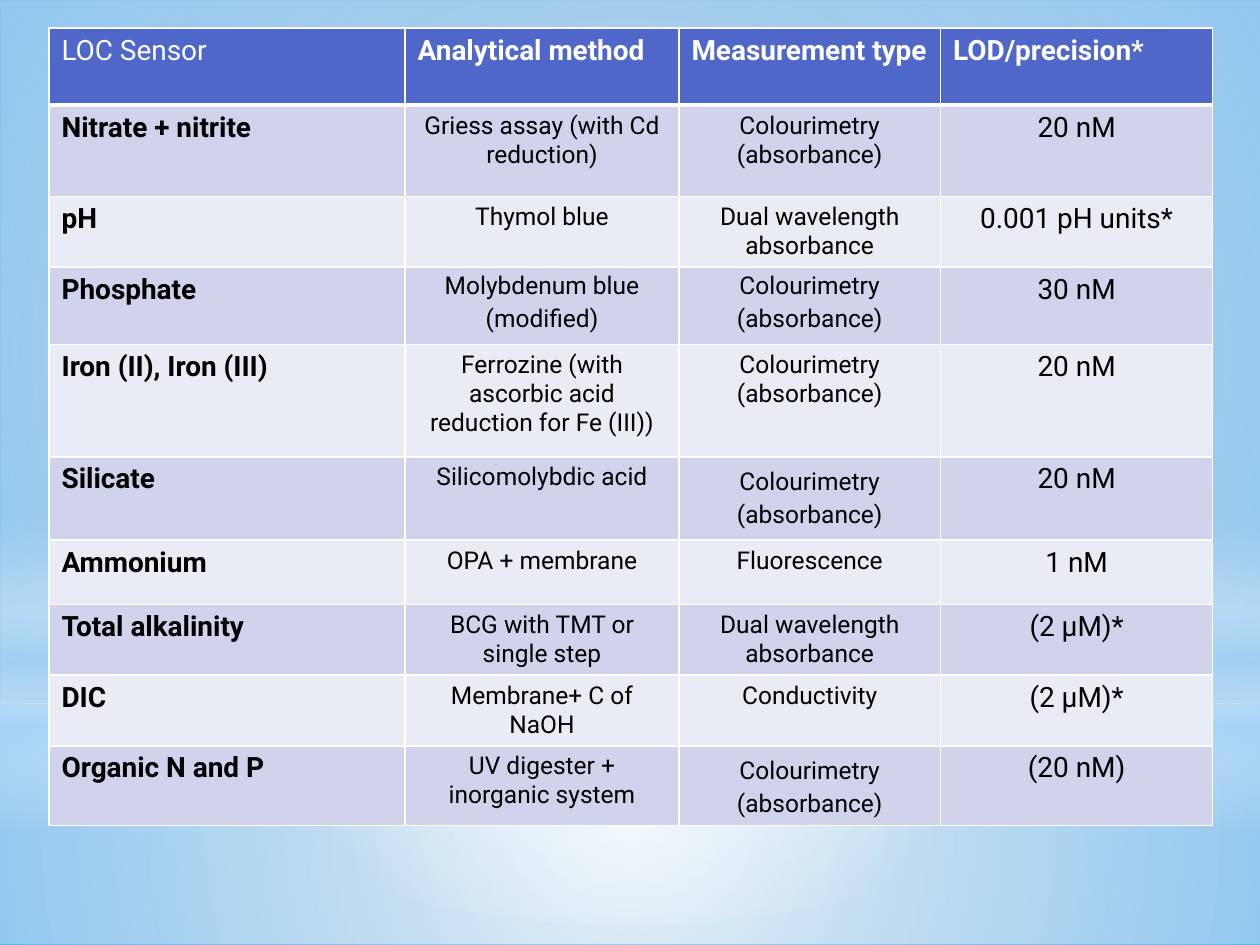
from dataclasses import dataclass

from lxml.etree import SubElement
from pptx import Presentation
from pptx.dml.color import RGBColor
from pptx.enum.shapes import MSO_SHAPE
from pptx.enum.text import PP_ALIGN
from pptx.oxml.ns import qn
from pptx.util import Pt


@dataclass(frozen=True)
class Theme:
    font: str = "Roboto"
    large: int = 16
    small: int = 14
    backdrop: str = "0D79CA"
    sky: str = "B4DCFA"
    white: str = "FFFFFF"
    black: str = "000000"
    header: str = "4E67C8"
    bands: tuple = ("D0D3EB", "E9EBF5")


THEME = Theme()
SLIDE_WIDTH, SLIDE_HEIGHT = 720, 540
TABLE_LEFT, TABLE_TOP = 28, 16
COLUMN_WIDTHS = (203.5, 156.5, 149.5, 155.5)
ROW_HEIGHTS = (44, 52.25, 40.25, 44.25, 64.25, 47.5, 37, 40.25, 40.25, 45.5)

HEADINGS = ("LOC Sensor", "Analytical method", "Measurement type", "LOD/precision*")
COLOURIMETRY = "Colourimetry (absorbance)"
DUAL = "Dual wavelength absorbance"
SENSORS = (
    ("Nitrate + nitrite", "Griess assay (with Cd reduction)", COLOURIMETRY, "20 nM"),
    ("pH", "Thymol blue", DUAL, "0.001 pH units*"),
    ("Phosphate", "Molybdenum blue (modified)", COLOURIMETRY, "30 nM"),
    ("Iron (II), Iron (III)", "Ferrozine (with ascorbic acid reduction for Fe (III))",
     COLOURIMETRY, "20 nM"),
    ("Silicate", "Silicomolybdic acid", COLOURIMETRY, "20 nM"),
    ("Ammonium", "OPA + membrane", "Fluorescence", "1 nM"),
    ("Total alkalinity", "BCG with TMT or single step", DUAL, "(2 µM)*"),
    ("DIC", "Membrane+ C of NaOH", "Conductivity", "(2 µM)*"),
    ("Organic N and P", "UV digester + inorganic system", COLOURIMETRY, "(20 nM)"),
)
LOOSE_CELLS = {(3, 1), (3, 2), (5, 2), (9, 2)}
UNPADDED_CELLS = {(3, 1), (3, 2)}


def add_glow(slide, kind, top, height, stops, angle=None):
    """Add a full-width gradient; stops are (position, colour, opacity) in percent.

    Without an angle the gradient is circular around the centre.
    """
    shape = slide.shapes.add_shape(kind, 0, Pt(top), Pt(SLIDE_WIDTH), Pt(height))
    shape.shadow.inherit = False
    shape.line.fill.background()
    shape.fill.gradient()
    gradient = shape.fill._xPr.find(qn("a:gradFill"))
    for child in list(gradient):
        gradient.remove(child)
    stop_list = SubElement(gradient, qn("a:gsLst"))
    for position, colour, opacity in stops:
        stop = SubElement(stop_list, qn("a:gs"), pos=str(position * 1000))
        tone = SubElement(stop, qn("a:srgbClr"), val=colour)
        SubElement(tone, qn("a:alpha"), val=str(opacity * 1000))
    if angle is None:
        circle = SubElement(gradient, qn("a:path"), {"path": "circle"})
        SubElement(circle, qn("a:fillToRect"), dict.fromkeys("ltrb", "50000"))
    else:
        SubElement(gradient, qn("a:lin"), ang=str(angle * 60000), scaled="0")


def add_background(slide):
    white, sky = THEME.white, THEME.sky
    fill = slide.background.fill
    fill.solid()
    fill.fore_color.rgb = RGBColor.from_string(THEME.backdrop)
    horizon = 402
    add_glow(slide, MSO_SHAPE.RECTANGLE, horizon, SLIDE_HEIGHT - horizon,
             ((0, white, 91), (37, white, 76), (100, sky, 79)))
    add_glow(slide, MSO_SHAPE.RECTANGLE, 0, horizon,
             ((0, white, 89), (48, white, 62), (100, sky, 79)))
    add_glow(slide, MSO_SHAPE.RECTANGLE, 296.5, 180,
             ((0, white, 0), (29, white, 30), (45, sky, 40),
              (55, white, 26), (65, sky, 60), (100, white, 0)), angle=90)
    add_glow(slide, MSO_SHAPE.OVAL, 126, horizon,
             ((0, white, 100), (56, white, 0)))


def set_borders(cell, bottom_width):
    properties = cell._tc.get_or_add_tcPr()
    widths = {"a:lnL": 1, "a:lnR": 1, "a:lnT": 1, "a:lnB": bottom_width}
    for index, (tag, width) in enumerate(widths.items()):
        line = properties.makeelement(qn(tag), {"w": str(Pt(width))})
        SubElement(SubElement(line, qn("a:solidFill")), qn("a:srgbClr"), val=THEME.white)
        properties.insert(index, line)


def fill_cell(cell, text, fill, colour, size, bold, centred):
    cell.fill.solid()
    cell.fill.fore_color.rgb = RGBColor.from_string(fill)
    cell.text_frame.text = text
    para = cell.text_frame.paragraphs[0]
    para.alignment = PP_ALIGN.CENTER if centred else PP_ALIGN.LEFT
    font = para.runs[0].font
    font.name, font.size, font.bold = THEME.font, Pt(size), bold
    font.color.rgb = RGBColor.from_string(colour)


def loosen_cell(cell, unpadded):
    cell.text_frame.paragraphs[0].line_spacing = 1.15
    if unpadded:
        cell.margin_left = cell.margin_right = Pt(5)
        cell.margin_top = cell.margin_bottom = 0


def add_sensor_table(slide):
    table = slide.shapes.add_table(
        len(ROW_HEIGHTS), len(COLUMN_WIDTHS), Pt(TABLE_LEFT), Pt(TABLE_TOP),
        Pt(sum(COLUMN_WIDTHS)), Pt(sum(ROW_HEIGHTS))).table
    for column, width in zip(table.columns, COLUMN_WIDTHS):
        column.width = Pt(width)
    for row, height in zip(table.rows, ROW_HEIGHTS):
        row.height = Pt(height)

    for column, heading in enumerate(HEADINGS):
        cell = table.cell(0, column)
        fill_cell(cell, heading, THEME.header, THEME.white, THEME.large,
                  bold=column > 0, centred=False)
        set_borders(cell, bottom_width=3)

    for row, sensor in enumerate(SENSORS, start=1):
        for column, text in enumerate(sensor):
            cell = table.cell(row, column)
            size = THEME.small if column in (1, 2) else THEME.large
            fill_cell(cell, text, THEME.bands[(row - 1) % 2], THEME.black, size,
                      bold=column == 0, centred=column > 0)
            set_borders(cell, bottom_width=1)
            if (row, column) in LOOSE_CELLS:
                loosen_cell(cell, (row, column) in UNPADDED_CELLS)


def main():
    deck = Presentation()
    deck.slide_width, deck.slide_height = Pt(SLIDE_WIDTH), Pt(SLIDE_HEIGHT)
    slide = deck.slides.add_slide(deck.slide_layouts[6])
    add_background(slide)
    add_sensor_table(slide)
    deck.save("out.pptx")


if __name__ == "__main__":
    main()
